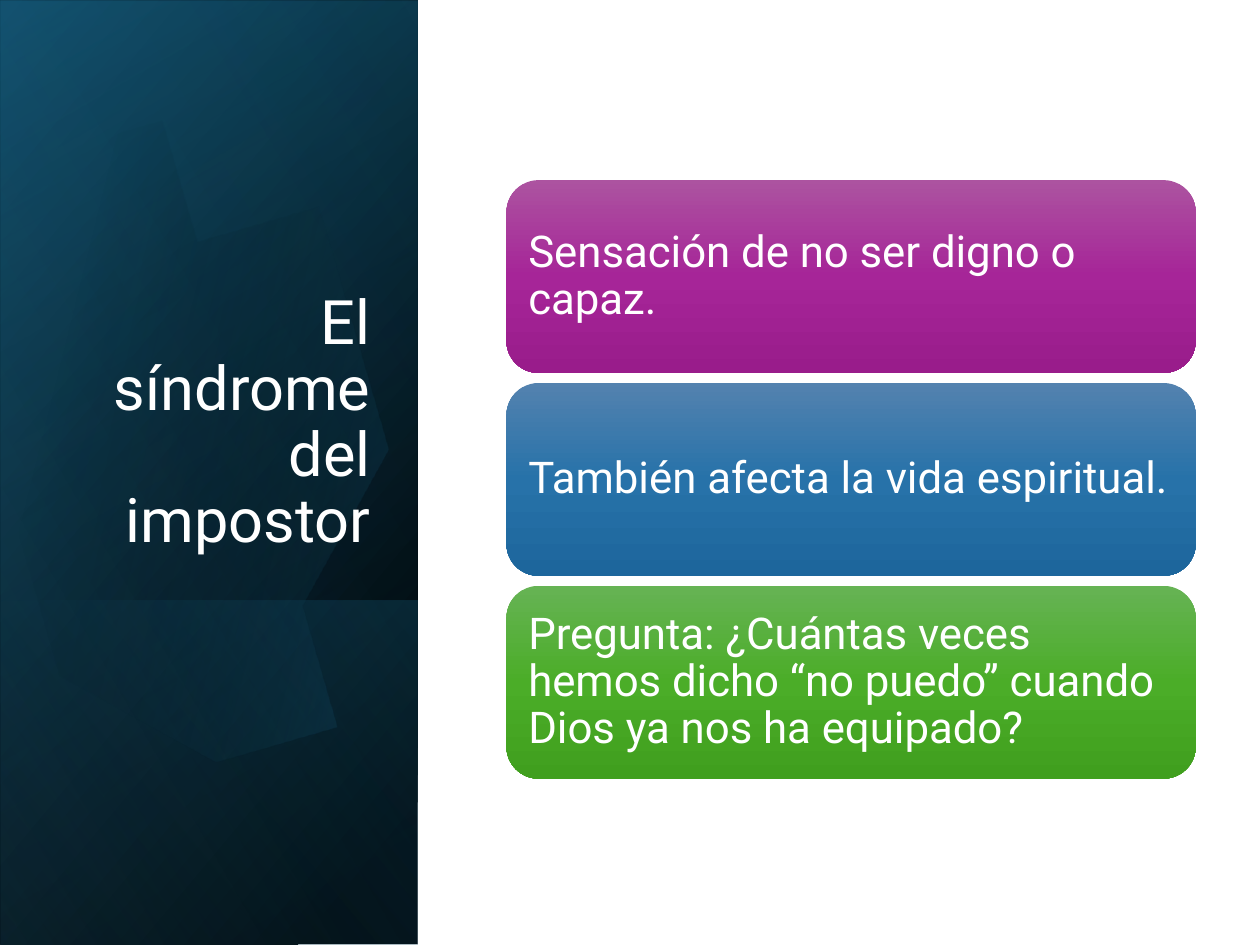
import math
from dataclasses import dataclass

import pptx
import pptx.dml.color
import pptx.enum.shapes
import pptx.enum.text
import pptx.oxml
import pptx.oxml.ns
import pptx.util
from pptx.util import Inches


@dataclass(frozen=True)
class Theme:
    font: str = "Roboto"
    text: str = "FFFFFF"
    title_size: int = 35
    card_size: int = 25
    purple: tuple = ((0, "AC53A0"), (50, "A62598"), (100, "991C8B"))
    blue: tuple = ((0, "5382AF"), (50, "2772A9"), (100, "1D669C"))
    green: tuple = ((0, "66B354"), (50, "4BAD28"), (100, "409F1E"))
    panel: tuple = ((8, "000000"), (100, "104862"))
    panel_tint: tuple = ((0, "000000", 0), (99, "156082", 46))
    lower_band: tuple = ((2, "156082", 29), (100, "000000", 30))
    oval: tuple = ((29, "000000", 0), (100, "156082", 43))
    sheen: tuple = ((0, "000000", 0), (99, "46B1E1", 11))


THEME = Theme()
SHAPES = pptx.enum.shapes.MSO_SHAPE
ANCHOR = pptx.enum.text.MSO_ANCHOR
ALIGN = pptx.enum.text.PP_ALIGN

OVAL_ROTATION = -16.1
OVAL_CENTER = (1.19, 3.35)
OVAL_START = (0.96, 1.14)
# One point is a straight side, three points are a Bézier curve.
OVAL_SEGMENTS = [
    [(1.71, 1.22), (2.44, 1.92), (2.73, 2.9)],
    [(3.07, 4.12), (2.62, 5.31), (1.71, 5.57)],
    [(1.14, 5.74), (0.53, 5.5), (0.07, 5)],
    [(-0.03, 4.88)],
    [(-0.25, 1.66)],
    [(-0.15, 1.54)],
    [(0.02, 1.37), (0.22, 1.25), (0.45, 1.18)],
    [(0.62, 1.13), (0.79, 1.12), OVAL_START],
]


def paint_gradient(shape, stops, angle):
    """Fill with (position, colour[, opacity]) stops, all in percent, without outline."""
    shape.shadow.inherit = False
    shape.line.fill.background()
    shape.fill.gradient()
    gradient = shape._element.spPr.find(pptx.oxml.ns.qn("a:gradFill"))
    marks = ""
    for position, color, *opacity in stops:
        alpha = f'<a:alpha val="{opacity[0] * 1000}"/>' if opacity else ""
        marks += (f'<a:gs pos="{position * 1000}"><a:srgbClr val="{color}">'
                  f'{alpha}</a:srgbClr></a:gs>')
    new_gradient = pptx.oxml.parse_xml(
        f'<a:gradFill {pptx.oxml.ns.nsdecls("a")} rotWithShape="1">'
        f'<a:gsLst>{marks}</a:gsLst>'
        f'<a:lin ang="{angle * 60000}" scaled="0"/></a:gradFill>')
    gradient.getparent().replace(gradient, new_gradient)


def add_panel_layer(slide, box, stops, angle):
    layer = slide.shapes.add_shape(SHAPES.RECTANGLE, *map(Inches, box))
    layer.rotation = 90
    layer._element.spPr.find(pptx.oxml.ns.qn("a:xfrm")).set("flipH", "1")
    paint_gradient(layer, stops, angle)


def curve_points(start, controls, steps=16):
    """Sample a cubic Bézier curve, leaving out its start."""
    weights = (1, 3, 3, 1)
    for step in range(1, steps + 1):
        t = step / steps
        yield tuple(
            sum(weight * (1 - t) ** (3 - i) * t ** i * point[axis]
                for i, (weight, point) in enumerate(zip(weights, (start, *controls))))
            for axis in (0, 1))


def unrotate(point):
    """Turn an oval point back, so that the shape's own rotation restores it."""
    turn = math.radians(-OVAL_ROTATION)
    dx, dy = (value - center for value, center in zip(point, OVAL_CENTER))
    return (OVAL_CENTER[0] + dx * math.cos(turn) - dy * math.sin(turn),
            OVAL_CENTER[1] + dx * math.sin(turn) + dy * math.cos(turn))


def add_oval(slide):
    outline = [OVAL_START]
    for segment in OVAL_SEGMENTS:
        outline += segment if len(segment) == 1 else curve_points(outline[-1], segment)
    start, *others = map(unrotate, outline)
    builder = slide.shapes.build_freeform(*start, scale=Inches(1))
    builder.add_line_segments(others, close=True)
    oval = builder.convert_to_shape()
    oval.rotation = OVAL_ROTATION
    paint_gradient(oval, THEME.oval, 30)


def write_text(shape, text, size, align, frame_format):
    frame = shape.text_frame
    for name, value in frame_format.items():
        setattr(frame, name, value)
    paragraph = frame.paragraphs[0]
    paragraph.alignment = align
    paragraph.line_spacing = 0.9
    run = paragraph.add_run()
    run.text = text
    run.font.name = THEME.font
    run.font.size = pptx.util.Pt(size)
    run.font.color.rgb = pptx.dml.color.RGBColor.from_string(THEME.text)


def add_title(slide, text):
    title = slide.shapes.add_textbox(*map(Inches, (0.48, 1.84, 2.56, 2.62)))
    write_text(title, text, THEME.title_size, ALIGN.RIGHT,
               {"word_wrap": True, "vertical_anchor": ANCHOR.BOTTOM})


def add_card(slide, top, text, stops):
    card = slide.shapes.add_shape(
        SHAPES.ROUNDED_RECTANGLE, Inches(4.02), Inches(top), Inches(5.47), Inches(1.53))
    paint_gradient(card, stops, 90)
    margins = {f"margin_{side}": Inches(0.1) for side in ("left", "top", "right", "bottom")}
    write_text(card, text, THEME.card_size, ALIGN.LEFT,
               {"word_wrap": True, "vertical_anchor": ANCHOR.MIDDLE, **margins})


def main():
    deck = pptx.Presentation()
    deck.slide_width, deck.slide_height = Inches(10), Inches(7.5)
    slide = deck.slides.add_slide(deck.slide_layouts[6])

    panel_box = (-2.09, 2.09, 7.5, 3.31)
    add_panel_layer(slide, panel_box, THEME.panel, 50)
    add_panel_layer(slide, (-2.09, 2.11, 7.5, 3.31), THEME.panel_tint, 30)
    add_panel_layer(slide, (0.29, 4.48, 2.74, 3.31), THEME.lower_band, 130)
    add_oval(slide)
    add_panel_layer(slide, panel_box, THEME.sheen, 120)

    add_title(slide, "El síndrome del impostor")
    cards = [
        ("Sensación de no ser digno o capaz.", THEME.purple),
        ("También afecta la vida espiritual.", THEME.blue),
        ("Pregunta: ¿Cuántas veces hemos dicho “no puedo” cuando Dios ya nos ha equipado?",
         THEME.green),
    ]
    for index, (text, stops) in enumerate(cards):
        add_card(slide, 1.43 + 1.61 * index, text, stops)

    deck.save("out.pptx")


if __name__ == "__main__":
    main()
